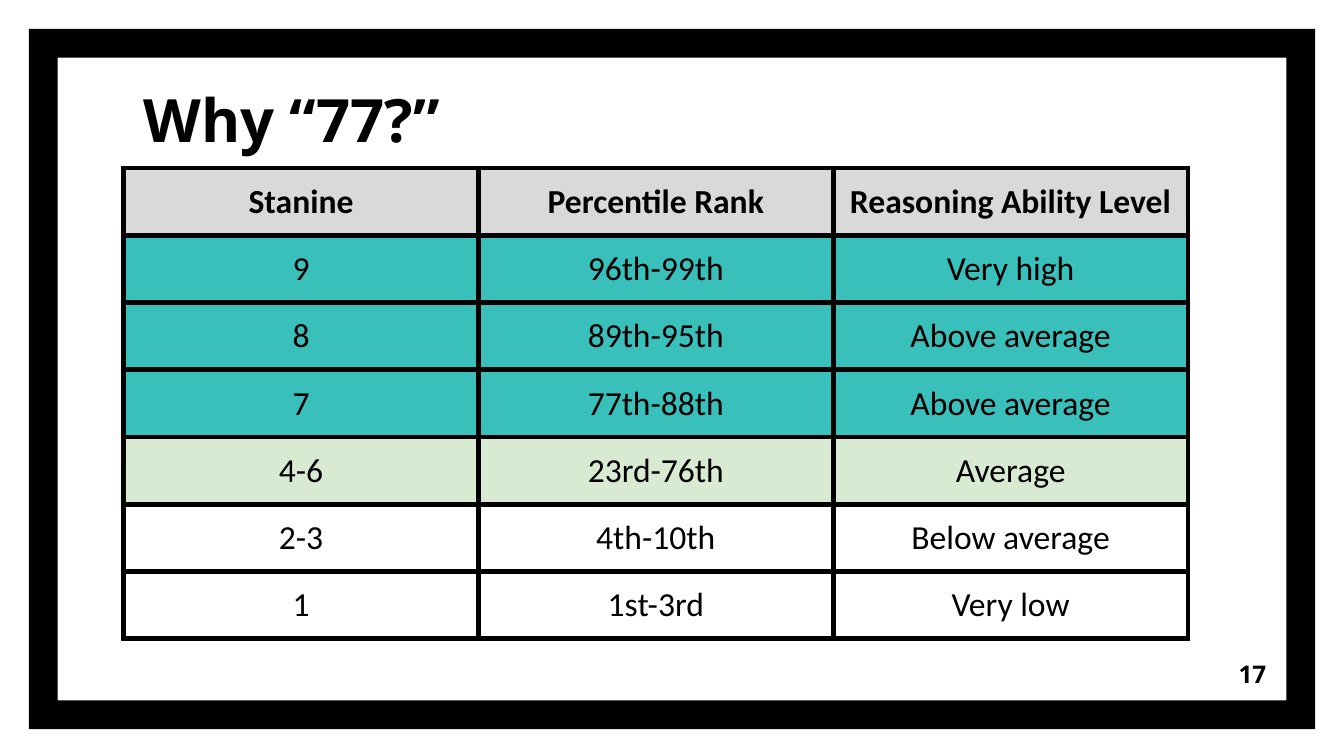
from collections import namedtuple

from lxml.etree import SubElement
from pptx import Presentation
from pptx.dml.color import RGBColor
from pptx.enum.shapes import MSO_SHAPE
from pptx.enum.text import MSO_ANCHOR, PP_ALIGN
from pptx.oxml.ns import qn
from pptx.util import Inches, Pt

Box = namedtuple("Box", "left top width height")

SLIDE_WIDTH = Inches(10)
SLIDE_HEIGHT = SLIDE_WIDTH * 9 // 16
GRID_UNIT = SLIDE_WIDTH // 100
INSET = GRID_UNIT

COLORS = {
    "ink": "000000",
    "paper": "FFFFFF",
    "header": "D9D9D9",
    "above": "39C0BA",
    "average": "D9EAD3",
}

ROWS = [
    ("header", "Stanine", "Percentile Rank", "Reasoning Ability Level"),
    ("above", "9", "96th-99th", "Very high"),
    ("above", "8", "89th-95th", "Above average"),
    ("above", "7", "77th-88th", "Above average"),
    ("average", "4-6", "23rd-76th", "Average"),
    ("paper", "2-3", "4th-10th", "Below average"),
    ("paper", "1", "1st-3rd", "Very low"),
]


def color(name):
    return RGBColor.from_string(COLORS[name])


def place(*grid_lengths):
    return Box(*(round(length * GRID_UNIT) for length in grid_lengths))


def write(paragraph, text, font, size, bold, align):
    paragraph.alignment = align
    span = paragraph.add_run()
    span.text = text
    span.font.name = font
    span.font.size = Pt(size)
    span.font.bold = bold
    span.font.color.rgb = color("ink")


def set_insets(target):
    target.margin_left = target.margin_right = INSET
    target.margin_top = target.margin_bottom = INSET


def add_frame(page, box):
    frame = page.shapes.add_shape(MSO_SHAPE.FRAME, *box)
    frame.adjustments[0] = 0.041
    frame.shadow.inherit = False
    frame.fill.solid()
    frame.fill.fore_color.rgb = color("ink")
    frame.line.fill.background()


def add_label(page, box, text, size, align, anchor):
    text_frame = page.shapes.add_textbox(*box).text_frame
    text_frame.word_wrap = True
    text_frame.vertical_anchor = anchor
    set_insets(text_frame)
    write(text_frame.paragraphs[0], text, "Open Sans", size, True, align)


def add_borders(cell, width):
    properties = cell._tc.get_or_add_tcPr()
    for side in ("lnL", "lnR", "lnT", "lnB"):
        line = SubElement(properties, qn(f"a:{side}"), w=str(Pt(width)))
        fill = SubElement(line, qn("a:solidFill"))
        SubElement(fill, qn("a:srgbClr"), val=COLORS["ink"])


def add_stanine_table(page, box):
    column_count = len(ROWS[0]) - 1
    table = page.shapes.add_table(len(ROWS), column_count, *box).table
    for column in table.columns:
        column.width = box.width // column_count
    for row, (band, *texts) in zip(table.rows, ROWS):
        row.height = box.height // len(ROWS)
        for cell, text in zip(row.cells, texts):
            set_insets(cell)
            add_borders(cell, 3)
            cell.fill.solid()
            cell.fill.fore_color.rgb = color(band)
            write(cell.text_frame.paragraphs[0], text, "Calibri", 18,
                  band == "header", PP_ALIGN.CENTER)


def main():
    deck = Presentation()
    deck.slide_width, deck.slide_height = SLIDE_WIDTH, SLIDE_HEIGHT
    page = deck.slides.add_slide(deck.slide_layouts[6])
    page.background.fill.solid()
    page.background.fill.fore_color.rgb = color("paper")

    add_frame(page, place(2.15, 2.15, 95.7, 52.1))
    add_label(page, place(89.2, 48, 6, 4.3), "17", 13,
              PP_ALIGN.RIGHT, MSO_ANCHOR.MIDDLE)
    add_stanine_table(page, place(9.2, 12.5, 79.2, 29.4))
    add_label(page, place(9.7, 4.9, 27.6, 7.6), "Why “77?”", 32,
              PP_ALIGN.LEFT, MSO_ANCHOR.BOTTOM)
    deck.save("out.pptx")


if __name__ == "__main__":
    main()
